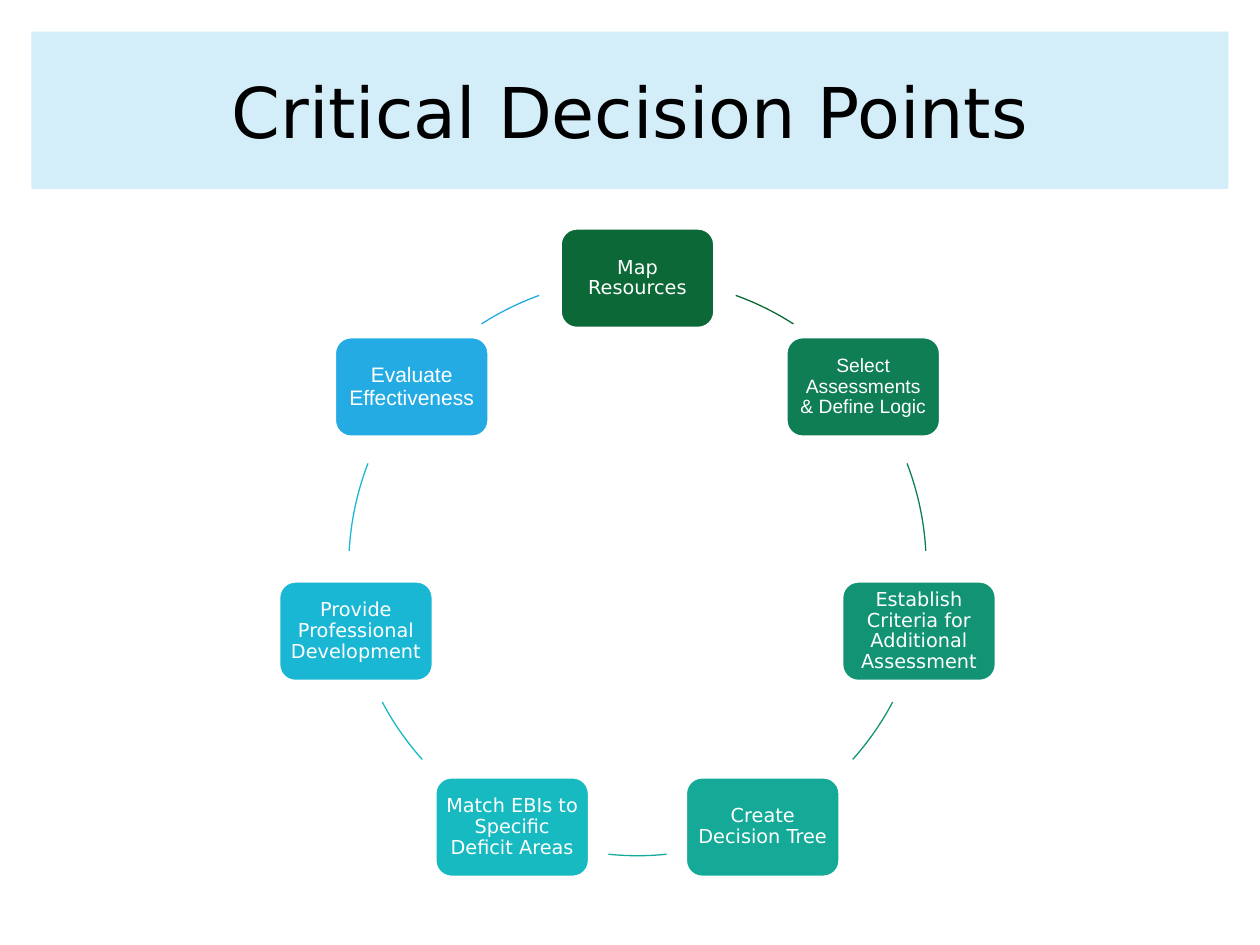
"""Build the Critical Decision Points cycle slide."""
from math import cos, radians, sin

from lxml.etree import SubElement
from pptx import Presentation
from pptx.dml.color import RGBColor
from pptx.enum.shapes import MSO_SHAPE as SHAPE
from pptx.enum.text import MSO_ANCHOR as ANCHOR, PP_ALIGN as ALIGN
from pptx.oxml.ns import qn
from pptx.util import Pt

TITLE = "Critical Decision Points"
SANS, ARIAL = "DejaVu Sans", "Arial"
STEPS = [
    ("Map Resources", "0C6937", SANS, 11, (19.9, 32.7)),
    ("Select Assessments & Define Logic", "0F7E54", ARIAL, 11, (69, 86.8)),
    ("Establish Criteria for Additional Assessment", "129474", SANS, 11, (117.9, 131.8)),
    ("Create Decision Tree", "15AA98", SANS, 11, (174.2, 185.8)),
    ("Match EBIs to Specific Deficit Areas", "17BAC0", SANS, 11, (228.2, 242.1)),
    ("Provide Professional Development", "1AB7D5", SANS, 11, (273.2, 291)),
    ("Evaluate Effectiveness", "24ABE4", ARIAL, 12, (327.3, 340.1)),
]
CX, CY, RADIUS = 364.3, 324, 165
BOX_W, BOX_H = 88.5, 57.5


def rgb(value):
    """Return the colour for a hex string."""
    return RGBColor.from_string(value)


def add_shape(s, kind, x, y, w, h, fill=None, line=None, weight=1):
    """Add a preset shape with the given fill and line."""
    sp = s.shapes.add_shape(kind, Pt(x), Pt(y), Pt(w), Pt(h))
    sp.shadow.inherit = False
    if fill:
        sp.fill.solid()
        sp.fill.fore_color.rgb = rgb(fill)
    else:
        sp.fill.background()
    if line:
        sp.line.color.rgb = rgb(line)
        sp.line.width = Pt(weight)
    else:
        sp.line.fill.background()
    return sp


def write(sp, text, font=SANS, size=11, color="FFFFFF", spacing=1.0, inset=(3.6, 3.6)):
    """Put centred text in a shape."""
    tf = sp.text_frame
    tf.word_wrap = True
    tf.vertical_anchor = ANCHOR.MIDDLE
    tf.margin_left = tf.margin_right = Pt(inset[0])
    tf.margin_top = tf.margin_bottom = Pt(inset[1])
    p = tf.paragraphs[0]
    p.alignment = ALIGN.CENTER
    p.line_spacing = spacing
    r = p.add_run()
    r.text = text
    r.font.name = font
    r.font.size = Pt(size)
    r.font.color.rgb = rgb(color)


def add_title(s):
    """Add the title on its translucent band."""
    sp = add_shape(s, SHAPE.RECTANGLE, 18, 18, 684, 90, fill="7DCCED")
    color = sp.fill._xPr.find(qn("a:solidFill"))[0]
    SubElement(color, qn("a:alpha"), val="33000")
    write(sp, TITLE, size=40, color="000000", inset=(7.2, 3.6))


def add_cycle(s):
    """Place the steps clockwise from the top, each followed by its arc."""
    for i, (text, color, font, size, span) in enumerate(STEPS):
        angle = radians(360 / len(STEPS) * i - 90)
        x = CX + RADIUS * cos(angle) - BOX_W / 2
        y = CY + RADIUS * sin(angle) - BOX_H / 2
        box = add_shape(s, SHAPE.ROUNDED_RECTANGLE, x, y, BOX_W, BOX_H,
                        fill=color, line="FFFFFF", weight=2)
        write(box, text, font=font, size=size, spacing=0.9)
        arc = add_shape(s, SHAPE.ARC, CX - RADIUS, CY - RADIUS, 2 * RADIUS, 2 * RADIUS,
                        line=color, weight=0.75)
        for k, degrees in enumerate(span):
            arc.adjustments[k] = (degrees - 90) % 360 * 0.6


def main():
    """Build and save the slide."""
    prs = Presentation()
    prs.slide_width, prs.slide_height = Pt(720), Pt(540)
    s = prs.slides.add_slide(prs.slide_layouts[6])
    add_title(s)
    add_cycle(s)
    prs.save("out.pptx")


if __name__ == "__main__":
    main()
